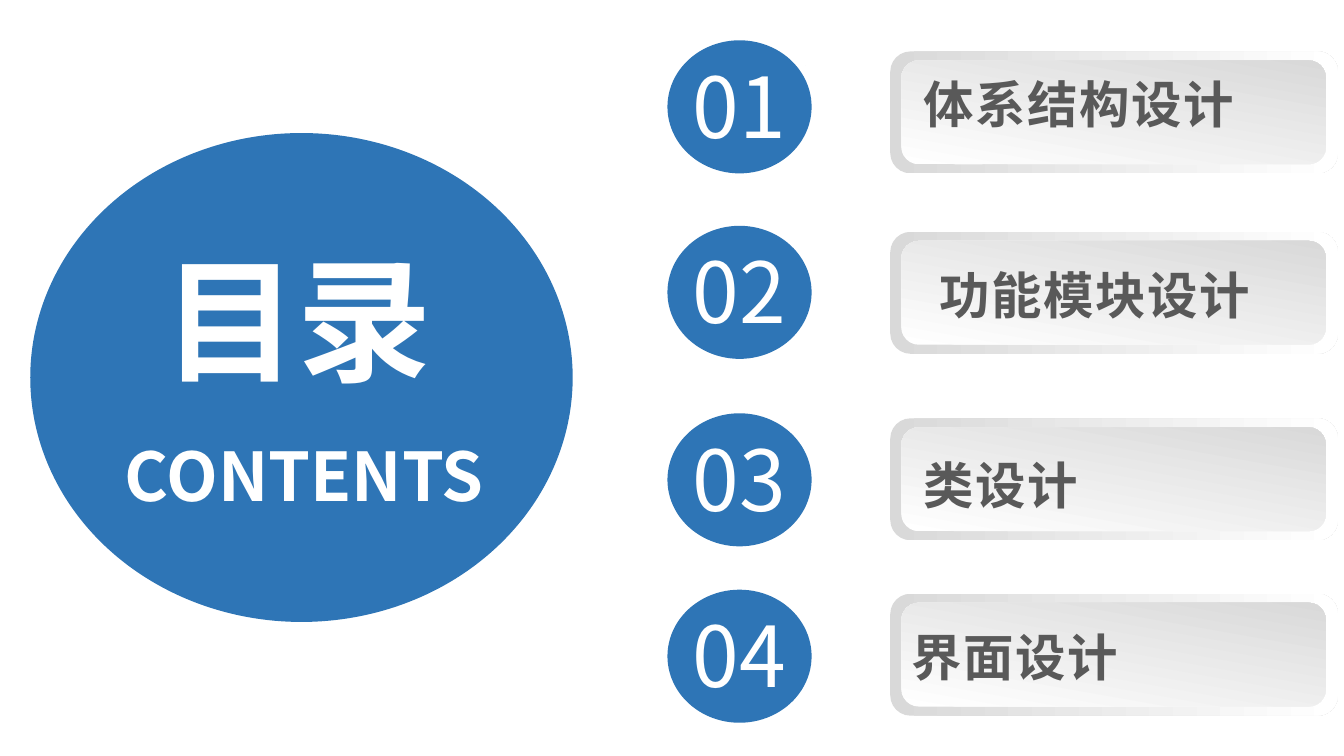
from pptx import Presentation
from pptx.dml.color import RGBColor
from pptx.enum.shapes import MSO_SHAPE
from pptx.enum.text import MSO_AUTO_SIZE
from pptx.oxml.ns import qn
from pptx.util import Inches, Pt
from lxml.etree import SubElement


def color(value):
    return RGBColor.from_string(value)


def write_text(frame, text, size, ink, font, bold=False, spacing=0):
    span = frame.paragraphs[0].add_run()
    span.text = text
    span.font.size = Pt(size)
    span.font.bold = bold
    span.font.color.rgb = color(ink)
    span.font.name = font
    properties = span.font._element
    SubElement(properties, qn("a:ea")).set("typeface", font)
    if spacing:
        properties.set("spc", str(round(spacing * 100)))


class ContentsSlide:
    font = "Noto Sans CJK SC"
    blue = "2E75B6"
    navy = "1C4670"
    white = "FFFFFF"
    silver = "D9D9D9"
    gray = "595959"

    def __init__(self, deck):
        self.page = deck.slides.add_slide(deck.slide_layouts[6])

    def shape(self, kind, left, top, width, height):
        shape = self.page.shapes.add_shape(
            kind, Inches(left), Inches(top), Inches(width), Inches(height))
        shape.shadow.inherit = False
        shape.line.fill.background()
        return shape

    def disc(self, left, top, width, height):
        disc = self.shape(MSO_SHAPE.OVAL, left, top, width, height)
        disc.fill.solid()
        disc.fill.fore_color.rgb = color(self.blue)

    def ring(self, left, top, width, height):
        ring = self.shape(MSO_SHAPE.DONUT, left, top, width, height)
        ring.adjustments[0] = 0.05
        ring.fill.solid()
        ring.fill.fore_color.rgb = color(self.navy)
        ring.line.color.rgb = color(self.white)
        ring.line.width = Pt(6)

    def panel(self, left, top, width, height, start, end, angle):
        panel = self.shape(MSO_SHAPE.ROUNDED_RECTANGLE, left, top, width, height)
        panel.fill.gradient()
        panel.fill.gradient_angle = angle
        for stop, value in zip(panel.fill.gradient_stops, (start, end)):
            stop.color.rgb = color(value)

    def label(self, text, left, top, width, height, **style):
        box = self.page.shapes.add_textbox(
            Inches(left), Inches(top), Inches(width), Inches(height))
        box.text_frame.word_wrap = True
        box.text_frame.auto_size = MSO_AUTO_SIZE.SHAPE_TO_FIT_TEXT
        write_text(box.text_frame, text, font=self.font, **style)

    def title(self):
        self.disc(0.3, 1.32, 5.38, 4.85)
        self.label("目录", 1.52, 2.3, 2.95, 1.72, size=96, ink=self.white, bold=True)
        self.label("CONTENTS", 1.14, 4.26, 3.97, 0.91, size=48, ink=self.white, bold=True)

    def number(self, text, top):
        self.ring(6.51, top, 1.66, 1.53)
        self.disc(6.62, top + 0.1, 1.43, 1.32)
        self.label(text, 6.77, top + 0.19, 1.4, 1.11, size=60, ink=self.white)

    def topic(self, text, top, text_left, text_top, text_width):
        self.panel(8.83, top, 4.44, 1.21, self.silver, self.white, 0)
        self.panel(8.94, top + 0.09, 4.21, 1.03, self.white, self.silver, 80)
        self.label(text, text_left, text_top, text_width, 0.71,
                   size=36, ink=self.gray, bold=True, spacing=1.2)


TOPICS = [
    ("体系结构设计", 0.3, 0.51, 9.06, 0.68, 3.93),
    ("功能模块设计", 2.14, 2.3, 9.22, 2.57, 3.93),
    ("类设计", 4, 4.15, 9.06, 4.46, 3.93),
    ("界面设计", 5.75, 5.89, 8.94, 6.16, 4.65),
]


def main():
    deck = Presentation()
    deck.slide_width = Inches(13.33)
    deck.slide_height = Inches(7.5)
    contents = ContentsSlide(deck)
    contents.title()
    for index, (text, number_top, *placement) in enumerate(TOPICS, 1):
        contents.number(f"{index:02}", number_top)
        contents.topic(text, *placement)
    deck.save("out.pptx")


if __name__ == "__main__":
    main()
